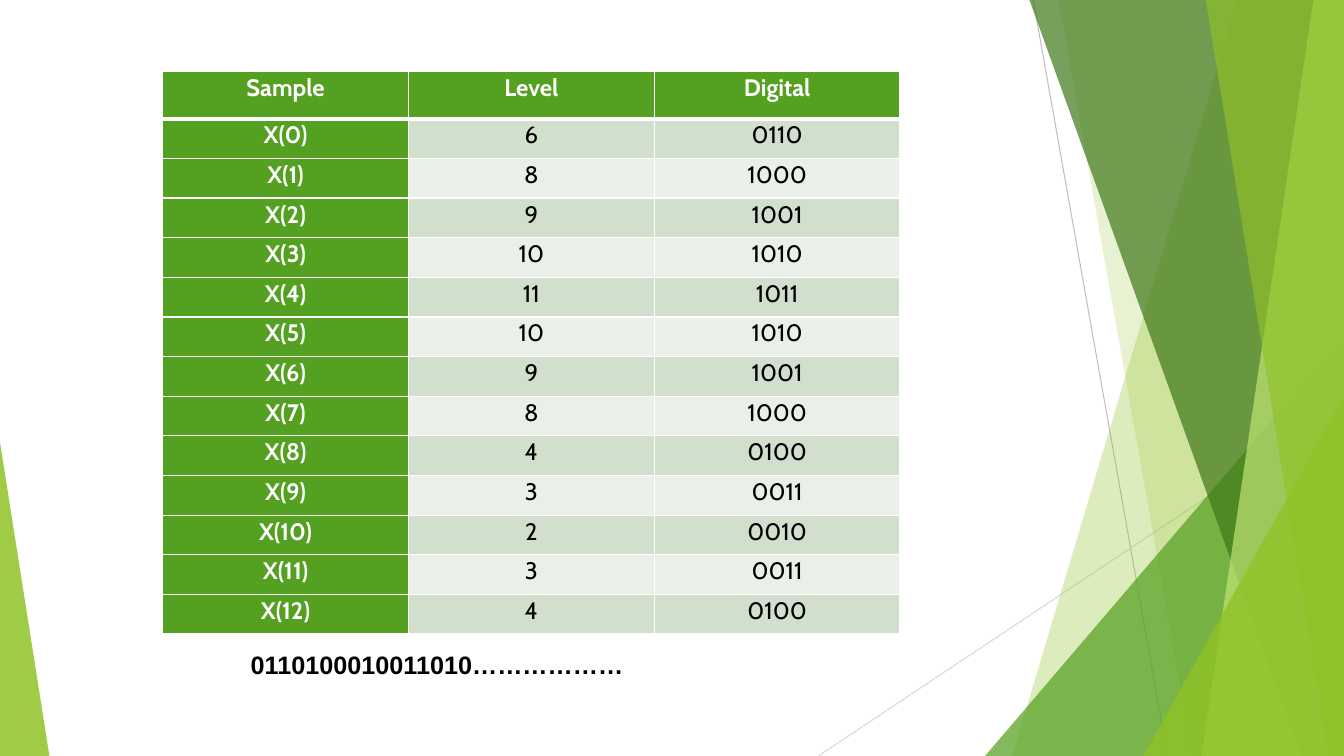
from lxml import etree
from pptx import Presentation
from pptx.dml.color import RGBColor
from pptx.enum.shapes import MSO_CONNECTOR, MSO_SHAPE
from pptx.enum.text import MSO_AUTO_SIZE, PP_ALIGN
from pptx.oxml.ns import qn
from pptx.util import Pt

STRAIGHT = MSO_CONNECTOR.STRAIGHT
TRIANGLE = MSO_SHAPE.ISOSCELES_TRIANGLE
CENTER = PP_ALIGN.CENTER
GROW = MSO_AUTO_SIZE.SHAPE_TO_FIT_TEXT
WIDTH, HEIGHT = 960, 540
WHITE, BLACK = "FFFFFF", "000000"
GREEN, LIME = "54A021", "90C226"
STRIPES = ("D1DFCD", "E9F0E8")

HEADINGS = ("Sample", "Level", "Digital")
LEVELS = (6, 8, 9, 10, 11, 10, 9, 8, 4, 3, 2, 3, 4)


def color(value):
    return RGBColor.from_string(value)


class SlideBuilder:
    def __init__(self, page):
        self.page = page
        self.shapes = page.shapes
        self.heading = {"name": "Cabin", "size": Pt(17), "bold": True}
        self.body = {**self.heading, "bold": False}
        self.caption = {"name": "Arial", "size": Pt(18), "bold": True}

    def line(self, start, end, line_color):
        connector = self.shapes.add_connector(
            STRAIGHT, *(Pt(value) for value in start + end))
        connector.line.color.rgb = color(line_color)
        connector.line.width = Pt(0.75)
        etree.SubElement(connector._element.spPr, qn("a:effectLst"))

    def paint(self, shape, fill_color, opacity):
        """Give a shape a see-through fill, no outline and no shadow."""
        shape.shadow.inherit = False
        shape.line.fill.background()
        shape.fill.solid()
        shape.fill.fore_color.rgb = color(fill_color)
        tint = shape._element.spPr.find(qn("a:solidFill"))[0]
        etree.SubElement(tint, qn("a:alpha"), val=str(opacity * 1000))

    def band(self, top_x, bottom_x, fill_color, opacity):
        """Fill from a slanted left edge to the right side of the slide."""
        outline = self.shapes.build_freeform(Pt(top_x), Pt(-0.6))
        outline.add_line_segments(
            [(Pt(WIDTH), Pt(-0.6)), (Pt(WIDTH), Pt(HEIGHT)),
             (Pt(bottom_x), Pt(HEIGHT))], close=True)
        self.paint(outline.convert_to_shape(), fill_color, opacity)

    def triangle(self, left, right, top, apex, fill_color, opacity):
        """Stand a triangle on the bottom edge, its apex at 0 (left) or 1."""
        shape = self.shapes.add_shape(
            TRIANGLE, Pt(left), Pt(top), Pt(right - left), Pt(HEIGHT - top))
        shape.adjustments[0] = apex
        self.paint(shape, fill_color, opacity)

    def set_text(self, frame, text, text_color, font_format, **para_format):
        para = frame.paragraphs[0]
        for name, value in {"line_spacing": 1.07, **para_format}.items():
            setattr(para, name, value)
        span = para.add_run()
        span.text = text
        for name, value in font_format.items():
            setattr(span.font, name, value)
        span.font.color.rgb = color(text_color)

    def borders(self, cell, top, bottom):
        properties = cell._tc.get_or_add_tcPr()
        widths = {"lnL": 1, "lnR": 1, "lnT": top, "lnB": bottom}
        for side, width in widths.items():
            edge = etree.SubElement(properties, qn(f"a:{side}"), w=str(Pt(width)))
            fill = etree.SubElement(edge, qn("a:solidFill"))
            etree.SubElement(fill, qn("a:srgbClr"), val=WHITE)

    def cell(self, cell, text, row, column):
        margins = {"margin_left": 4.5, "margin_right": 4.5,
                   "margin_top": 0, "margin_bottom": 0}
        for name, value in margins.items():
            setattr(cell, name, Pt(value))
        self.borders(cell, top=3 if row == 1 else 1, bottom=3 if row == 0 else 1)
        is_heading = row == 0 or column == 0
        cell.fill.solid()
        cell.fill.fore_color.rgb = color(
            GREEN if is_heading else STRIPES[(row - 1) % 2])
        self.set_text(cell.text_frame, text, WHITE if is_heading else BLACK,
                      self.heading if is_heading else self.body, alignment=CENTER)

    def table(self, left, top, column_width, header_height, row_height, rows):
        column_count = len(rows[0])
        table = self.shapes.add_table(
            len(rows), column_count, Pt(left), Pt(top),
            Pt(column_width * column_count),
            Pt(header_height + row_height * (len(rows) - 1))).table
        for column in table.columns:
            column.width = Pt(column_width)
        for index, values in enumerate(rows):
            table.rows[index].height = Pt(row_height if index else header_height)
            for column, text in enumerate(values):
                self.cell(table.cell(index, column), text, index, column)

    def text(self, left, top, width, height, text):
        box = self.shapes.add_textbox(Pt(left), Pt(top), Pt(width), Pt(height))
        box.text_frame.word_wrap = True
        box.text_frame.auto_size = GROW
        self.set_text(box.text_frame, text, BLACK, self.caption, space_after=Pt(8))


def main():
    deck = Presentation()
    deck.slide_width, deck.slide_height = Pt(WIDTH), Pt(HEIGHT)
    builder = SlideBuilder(deck.slides.add_slide(deck.slide_layouts[6]))

    builder.line((738, 0), (834, HEIGHT), "BFBFBF")
    builder.line((WIDTH, 290), (584.6, HEIGHT), "D9D9D9")
    builder.band(884.2, 723, LIME, 30)
    builder.band(756, 851.8, LIME, 20)
    builder.triangle(703.6, WIDTH, 240, 1, GREEN, 72)
    builder.band(735.2, 929.6, "3F7819", 70)
    builder.band(938.2, 858.2, "C0E474", 70)
    builder.band(861.2, 949, LIME, 65)
    builder.triangle(816.6, WIDTH, 283, 1, LIME, 80)
    builder.triangle(0, 35.3, 316, 0, LIME, 85)

    samples = [(f"X({index})", str(level), f"{level:04b}")
               for index, level in enumerate(LEVELS)]
    builder.table(116.2, 51.2, 175.6, 33.6, 28.32, [HEADINGS, *samples])
    builder.text(172, 458.6, 333.4, 29.5, "0110100010011010………………")
    deck.save("out.pptx")


if __name__ == "__main__":
    main()
